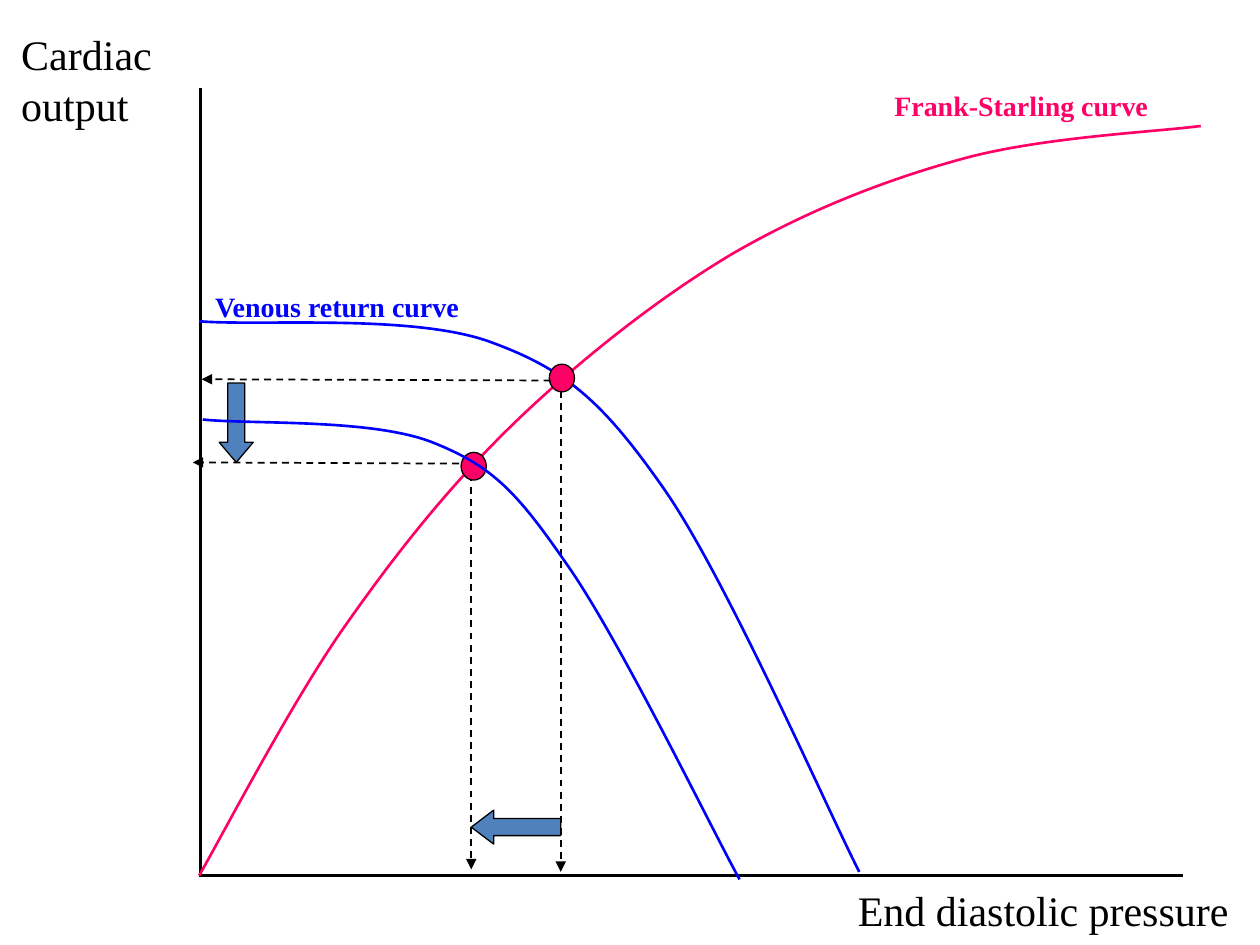
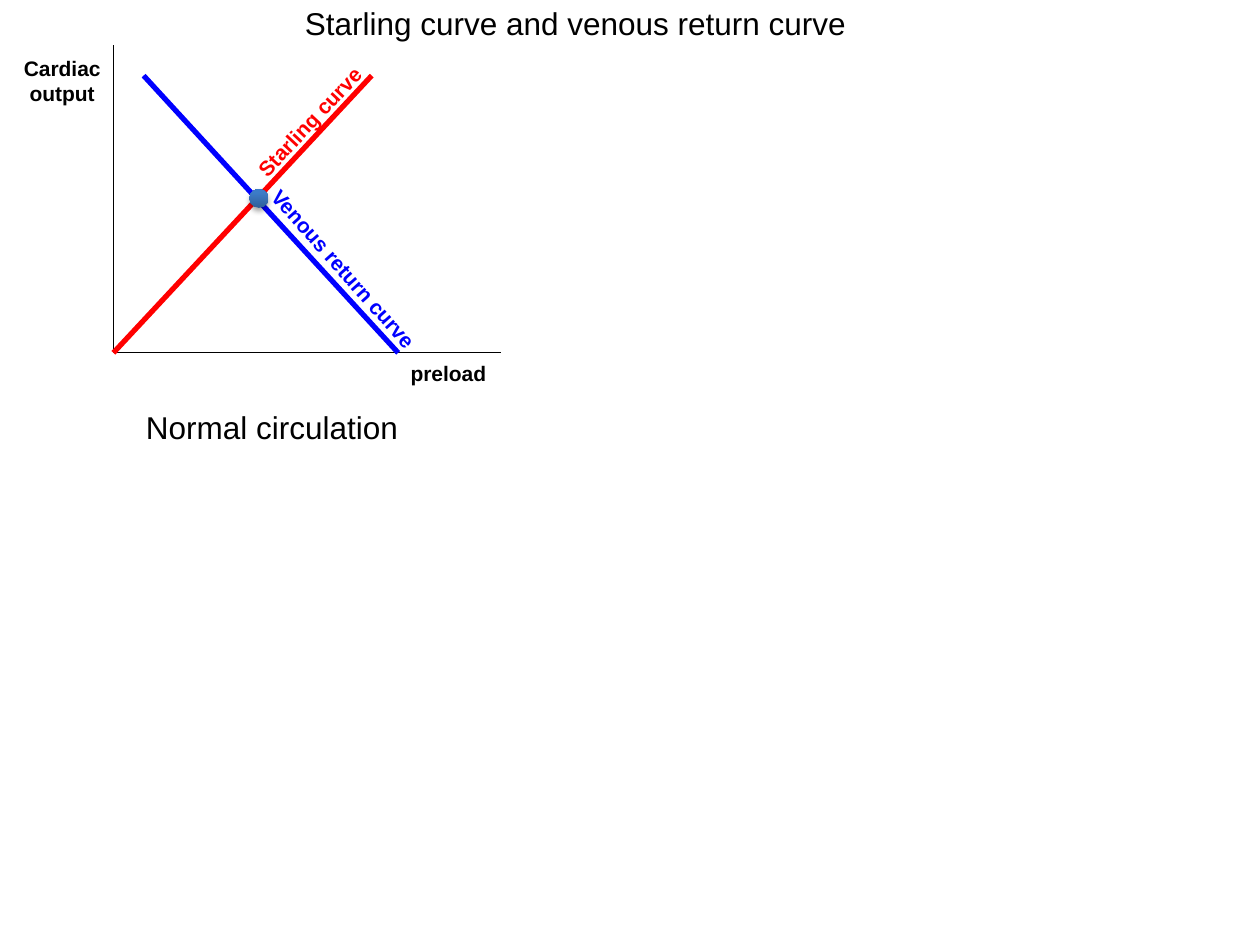
"""Draws two slides on cardiac output and venous return."""
import lxml.etree
import pptx
import pptx.dml.color
import pptx.enum.dml
import pptx.enum.shapes
import pptx.enum.text
import pptx.oxml.ns
import pptx.util

Inches = pptx.util.Inches
RGBColor = pptx.dml.color.RGBColor
Shape = pptx.enum.shapes.MSO_SHAPE
AutoSize = pptx.enum.text.MSO_AUTO_SIZE
qn = pptx.oxml.ns.qn

BLACK = RGBColor(0x00, 0x00, 0x00)
BLUE = RGBColor(0x00, 0x00, 0xFF)
RED = RGBColor(0xFF, 0x00, 0x00)
PINK = RGBColor(0xFF, 0x00, 0x66)
STEEL = RGBColor(0x4F, 0x81, 0xBD)
DOT_DARK = RGBColor(0x2F, 0x5F, 0x99)
DOT_LIGHT = RGBColor(0x3D, 0x7C, 0xC7)
SERIF = "Times New Roman"
SANS = "Arial"

FRANK_STARLING = [
    (1.58, 6.95), (1.77, 6.62), (2.31, 5.58), (2.73, 4.98), (3.15, 4.38),
    (3.58, 3.84), (4.1, 3.34), (4.61, 2.85), (5.23, 2.36), (5.82, 2.01),
    (6.41, 1.67), (7.02, 1.43), (7.64, 1.26), (8.26, 1.09), (9.13, 1.05),
    (9.53, 1)]
VENOUS_BEFORE = [
    (6.82, 6.92), (6.56, 6.41), (5.76, 4.58), (5.27, 3.88), (4.78, 3.18),
    (4.49, 2.93), (3.88, 2.71), (3.26, 2.49), (2.06, 2.59), (1.58, 2.55)]
VENOUS_AFTER = [
    (5.87, 6.98), (5.64, 6.56), (4.91, 5.06), (4.5, 4.48), (4.1, 3.9),
    (3.91, 3.7), (3.43, 3.51), (2.94, 3.32), (1.99, 3.37), (1.61, 3.33)]


def write(frame, text, font=SANS, size=12, color=BLACK, bold=False):
    frame.text = text
    for para in frame.paragraphs:
        para.alignment = pptx.enum.text.PP_ALIGN.LEFT
        for span in para.runs:
            span.font.name = font
            span.font.size = pptx.util.Pt(size)
            span.font.bold = bold
            span.font.color.rgb = color


def bend(outline):
    """Turns each three straight steps of the outline into one Bézier step."""
    steps = list(outline.iter(qn("a:lnTo")))
    for index in range(0, len(steps), 3):
        first, *others = steps[index:index + 3]
        bow = lxml.etree.Element(qn("a:cubicBezTo"))
        first.addprevious(bow)
        for step in (first, *others):
            bow.append(step[0])
            step.getparent().remove(step)


class Sketch:
    def __init__(self, deck):
        self.deck = deck
        self.page = None

    def new_page(self, layout):
        self.page = self.deck.slides.add_slide(self.deck.slide_layouts[layout])

    def title(self, text, left, top, width, height):
        box = self.page.shapes.title
        box.left, box.top = Inches(left), Inches(top)
        box.width, box.height = Inches(width), Inches(height)
        box.text_frame.auto_size = AutoSize.SHAPE_TO_FIT_TEXT
        box.text_frame.vertical_anchor = pptx.enum.text.MSO_ANCHOR.TOP
        write(box.text_frame, text, size=18)

    def label(self, text, left, top, width, height, turn=0, wrap=False,
              **style):
        box = self.page.shapes.add_textbox(
            Inches(left), Inches(top), Inches(width), Inches(height))
        box.rotation = turn
        box.text_frame.word_wrap = wrap
        box.text_frame.auto_size = AutoSize.SHAPE_TO_FIT_TEXT
        write(box.text_frame, text, **style)

    def line(self, start, end, color=BLACK, width=1.5, arrow=False):
        line = self.page.shapes.add_connector(
            pptx.enum.shapes.MSO_CONNECTOR.STRAIGHT,
            *map(Inches, start), *map(Inches, end))
        line.line.color.rgb = color
        line.line.width = pptx.util.Pt(width)
        properties = line._element.spPr
        if arrow:
            line.line.dash_style = pptx.enum.dml.MSO_LINE.DASH
            lxml.etree.SubElement(properties.find(qn("a:ln")),
                                  qn("a:tailEnd"), type="triangle")
        lxml.etree.SubElement(properties, qn("a:effectLst"))

    def arrow(self, start, end):
        self.line(start, end, width=1, arrow=True)

    def curve(self, controls, color):
        start, *others = [tuple(map(Inches, point)) for point in controls]
        builder = self.page.shapes.build_freeform(*start)
        builder.add_line_segments(others, close=False)
        curve = builder.convert_to_shape()
        bend(curve._element.spPr)
        curve.fill.background()
        curve.line.color.rgb = color
        curve.line.width = pptx.util.Pt(1.5)
        curve.shadow.inherit = False

    def shape(self, kind, left, top, width, height, fill, head=None):
        shape = self.page.shapes.add_shape(
            kind, Inches(left), Inches(top), Inches(width), Inches(height))
        shape.fill.solid()
        shape.fill.fore_color.rgb = fill
        shape.line.color.rgb = BLACK
        shape.line.width = pptx.util.Pt(0.75)
        shape.shadow.inherit = False
        if head:
            shape.adjustments[1] = head
        return shape

    def glossy_dot(self, left, top, size):
        dot = self.shape(Shape.OVAL, left, top, size, size, DOT_LIGHT)
        dot.line.fill.background()
        dot.fill.gradient()
        dot.fill.gradient_angle = 90
        for stop, color, position in zip(dot.fill.gradient_stops,
                                         (DOT_DARK, DOT_LIGHT), (0, 0.8)):
            stop.color.rgb = color
            stop.position = position
        effects = dot._element.spPr.find(qn("a:effectLst"))
        shadow = lxml.etree.SubElement(
            effects, qn("a:outerShdw"), blurRad=str(pptx.util.Pt(3.1)),
            dist=str(pptx.util.Pt(1.8)), dir="5400000", rotWithShape="0")
        tint = lxml.etree.SubElement(shadow, qn("a:srgbClr"), val=str(BLACK))
        lxml.etree.SubElement(tint, qn("a:alpha"), val="35000")


def draw_shifted_curves(sketch):
    sketch.new_page(6)
    sketch.line((1.59, 0.7), (1.59, 6.95))
    sketch.line((1.58, 6.95), (9.39, 6.95))
    sketch.curve(FRANK_STARLING, PINK)
    sketch.curve(VENOUS_BEFORE, BLUE)
    sketch.shape(Shape.OVAL, 4.36, 2.89, 0.2, 0.22, PINK)
    sketch.arrow((4.45, 3.1), (4.45, 6.92))
    sketch.arrow((4.37, 3.02), (1.6, 3.01))
    sketch.shape(Shape.DOWN_ARROW, 1.74, 3.04, 0.27, 0.63, STEEL, head=0.59)
    sketch.shape(Shape.LEFT_ARROW, 3.74, 6.43, 0.71, 0.27, STEEL, head=0.66)
    sketch.arrow((3.74, 3.67), (3.74, 6.9))
    sketch.arrow((3.74, 3.68), (1.53, 3.67))
    sketch.shape(Shape.OVAL, 3.66, 3.59, 0.2, 0.22, PINK)
    sketch.curve(VENOUS_AFTER, BLUE)
    curve_name = dict(font=SERIF, size=16, bold=True)
    sketch.label("Venous return curve", 1.61, 2.25, 2.16, 0.37,
                 color=BLUE, **curve_name)
    sketch.label("Frank-Starling curve", 7, 0.65, 2.24, 0.37,
                 color=PINK, **curve_name)
    axis_name = dict(font=SERIF, size=24)
    sketch.label("Cardiac output", 0.07, 0.18, 1.31, 0.91, wrap=True,
                 **axis_name)
    sketch.label("End diastolic pressure", 6.71, 6.97, 3.17, 0.51,
                 **axis_name)


def draw_normal_circulation(sketch):
    sketch.new_page(5)
    sketch.title("Starling curve and venous return curve",
                 2.32, -0.02, 5.83, 0.4)
    sketch.line((0.9, 0.36), (0.9, 2.8), width=0.75)
    sketch.line((0.9, 2.8), (3.98, 2.8), width=0.75)
    sketch.label("preload", 3.16, 2.81, 0.81, 0.3, bold=True)
    sketch.label("Cardiac\n output", 0.09, 0.39, 0.82, 0.51, bold=True)
    sketch.line((3.16, 2.8), (1.14, 0.6), BLUE, 3)
    sketch.line((0.9, 2.8), (2.95, 0.6), RED, 3)
    sketch.label("Normal circulation", 1.06, 3.19, 2.22, 0.4, size=18)
    sketch.glossy_dot(1.98, 1.5, 0.15)
    sketch.label("Starling curve", 1.8, 0.81, 1.32, 0.3, turn=313.1,
                 color=RED, bold=True)
    sketch.label("Venous return curve", 1.82, 1.99, 1.83, 0.3, turn=48.3,
                 color=BLUE, bold=True)


def main():
    deck = pptx.Presentation()
    deck.slide_width, deck.slide_height = Inches(10), Inches(7.5)
    sketch = Sketch(deck)
    draw_shifted_curves(sketch)
    draw_normal_circulation(sketch)
    deck.save("out.pptx")


if __name__ == "__main__":
    main()
